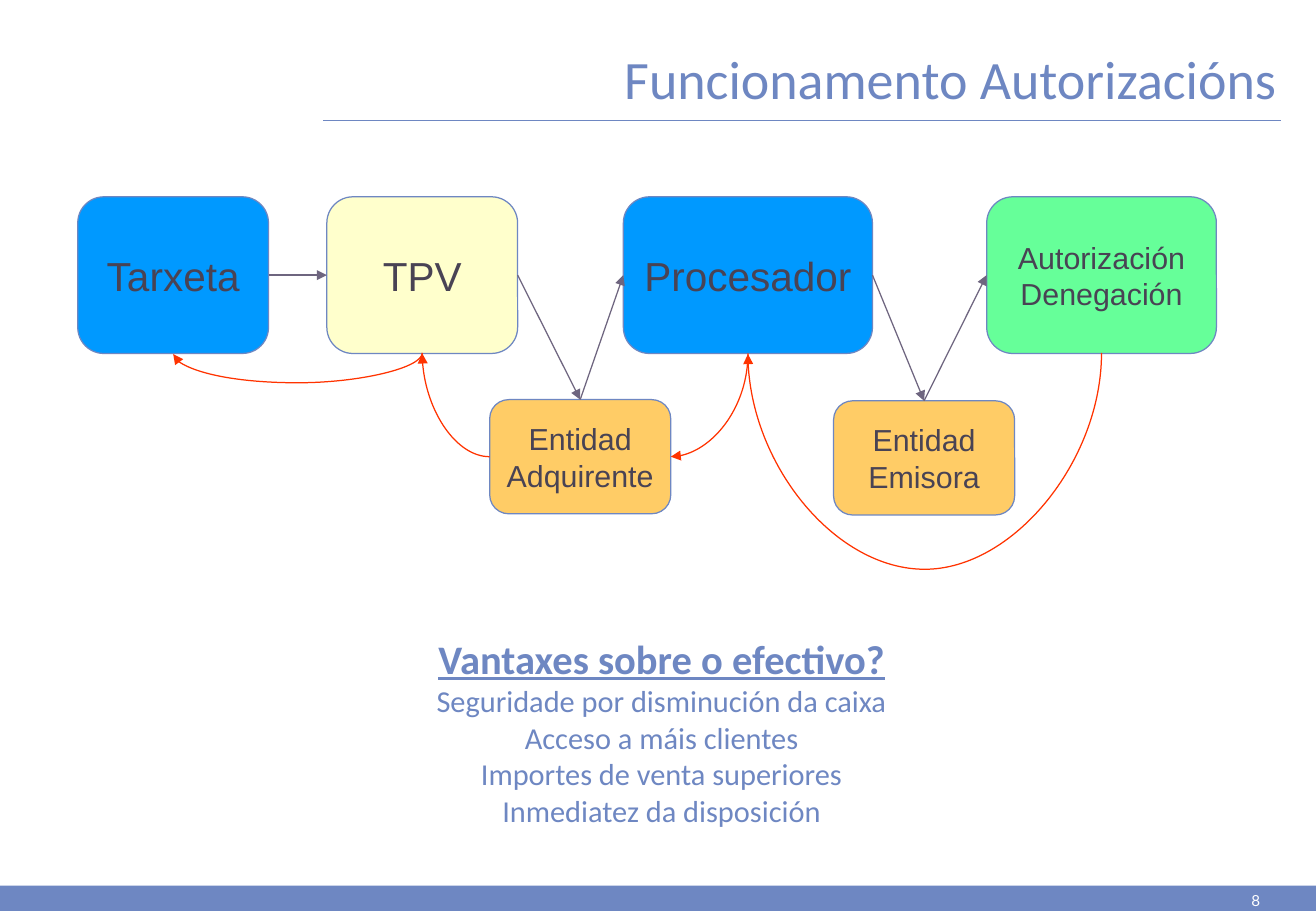
from dataclasses import dataclass

from lxml import etree
from pptx import Presentation
from pptx.dml.color import RGBColor
from pptx.enum.shapes import MSO_CONNECTOR, MSO_SHAPE
from pptx.enum.text import MSO_ANCHOR, MSO_AUTO_SIZE, PP_ALIGN
from pptx.oxml.ns import qn
from pptx.shapes.autoshape import Shape
from pptx.shapes.connector import Connector
from pptx.slide import Slide
from pptx.text.text import TextFrame
from pptx.util import Pt

PX = 9144
STRAIGHT, CURVE = MSO_CONNECTOR.STRAIGHT, MSO_CONNECTOR.CURVE
RECT, ROUND = MSO_SHAPE.RECTANGLE, MSO_SHAPE.ROUNDED_RECTANGLE
CENTER, RIGHT = PP_ALIGN.CENTER, PP_ALIGN.RIGHT
MIDDLE, BOTTOM = MSO_ANCHOR.MIDDLE, MSO_ANCHOR.BOTTOM
NO_FIT = MSO_AUTO_SIZE.NONE
SITE = {"top": 0, "left": 1, "bottom": 2, "right": 3}


@dataclass(frozen=True)
class Theme:
    brand: str = "6E87C2"
    white: str = "FFFFFF"
    ink: str = "494354"
    blue: str = "0099FF"
    cream: str = "FFFFCC"
    amber: str = "FFCC66"
    green: str = "66FF99"
    ask: str = "6E657F"
    reply: str = "FF3300"
    title: int = 32
    large: int = 24
    small: int = 18
    page: int = 9
    thin: float = 0.25
    edge: float = 0.75
    body: str = "Calibri"
    label: str = "Arial"
    number: str = "Lato"


@dataclass(frozen=True)
class Node:
    name: str
    text: str
    x: int
    y: int
    w: int
    h: int
    fill: str
    size: int


@dataclass(frozen=True)
class Link:
    start: str
    exit: str
    end: str
    entry: str


@dataclass(frozen=True)
class Curve(Link):
    turn: int
    drop: int = 0


T = Theme()

NODES = [
    Node("card", "Tarxeta", 64, 162, 157, 129, T.blue, T.large),
    Node("till", "TPV", 269, 162, 157, 129, T.cream, T.large),
    Node("switch", "Procesador", 513, 162, 205, 129, T.blue, T.large),
    Node("buyer", "Entidad\nAdquirente", 403, 329, 149, 94, T.amber, T.small),
    Node("bank", "Entidad\nEmisora", 686, 330, 149, 94, T.amber, T.small),
    Node("verdict", "Autorización\nDenegación", 812, 162, 189, 129, T.green, T.small),
]

LINKS = [
    Link("card", "right", "till", "left"),
    Link("till", "right", "buyer", "top"),
    Link("buyer", "top", "switch", "left"),
    Link("switch", "right", "bank", "top"),
    Link("bank", "top", "verdict", "left"),
]

CURVES = [
    Curve("verdict", "bottom", "switch", "bottom", 90, 181),
    Curve("switch", "bottom", "buyer", "right", 90),
    Curve("buyer", "left", "till", "bottom", 180),
    Curve("till", "bottom", "card", "bottom", 90, 25),
]

GAINS = [
    "Vantaxes sobre o efectivo?",
    "Seguridade por disminución da caixa",
    "Acceso a máis clientes",
    "Importes de venta superiores",
    "Inmediatez da disposición",
]


def px(*nums: int) -> list[int]:
    return [num * PX for num in nums]


def style(frame: TextFrame, font: str, size: int, color: str, align: PP_ALIGN) -> None:
    for para in frame.paragraphs:
        para.alignment = align
        for run in para.runs:
            run.font.name = font
            run.font.size = Pt(size)
            run.font.color.rgb = RGBColor.from_string(color)


def add_title(slide: Slide, text: str) -> None:
    title = slide.shapes.title
    title.left, title.top, title.width, title.height = px(61, 36, 1000, 55)
    frame = title.text_frame
    frame.text = text
    frame.auto_size = NO_FIT
    frame.vertical_anchor = BOTTOM
    frame.margin_bottom = 0
    style(frame, T.body, T.title, T.brand, RIGHT)


def add_text(slide: Slide, box: list[int], text: str, font: str, size: int, color: str) -> TextFrame:
    frame = slide.shapes.add_textbox(*box).text_frame
    frame.word_wrap = True
    frame.text = text
    style(frame, font, size, color, CENTER)
    return frame


def add_node(slide: Slide, node: Node) -> Shape:
    shape = slide.shapes.add_shape(ROUND, *px(node.x, node.y, node.w, node.h))
    shape.shadow.inherit = False
    shape.fill.solid()
    shape.fill.fore_color.rgb = RGBColor.from_string(node.fill)
    shape.line.color.rgb = RGBColor.from_string(T.brand)
    shape.line.width = Pt(T.edge)
    frame = shape.text_frame
    frame.word_wrap = False
    frame.vertical_anchor = MIDDLE
    frame.text = node.text
    style(frame, T.label, node.size, T.ink, CENTER)
    return shape


def paint(line: Connector, color: str, width: float, arrow: bool) -> None:
    line.line.color.rgb = RGBColor.from_string(color)
    line.line.width = Pt(width)
    props = line._element.spPr
    if arrow:
        etree.SubElement(props.find(qn("a:ln")), qn("a:tailEnd"), type="triangle")
    etree.SubElement(props, qn("a:effectLst"))


def join(slide: Slide, link: Link, shapes: dict[str, Shape], kind: MSO_CONNECTOR, color: str) -> Connector:
    line = slide.shapes.add_connector(kind, 0, 0, 0, 0)
    line.begin_connect(shapes[link.start], SITE[link.exit])
    line.end_connect(shapes[link.end], SITE[link.entry])
    paint(line, color, T.edge, True)
    return line


def bend(line: Connector, curve: Curve) -> None:
    mid_x = (line.begin_x + line.end_x) // 2
    mid_y = (line.begin_y + line.end_y) // 2
    wide = abs(line.end_x - line.begin_x)
    high = abs(line.end_y - line.begin_y)
    if curve.turn == 90:
        wide, high = high, wide
    wide = max(wide, PX)
    line.left, line.top = mid_x - wide // 2, mid_y - high // 2
    line.width, line.height = wide, high
    props = line._element.spPr
    frame = props.find(qn("a:xfrm"))
    frame.set("rot", str(curve.turn * 60000))
    frame.set("flipH", "0")
    frame.set("flipV", "0")
    shape = props.find(qn("a:prstGeom"))
    if curve.drop:
        ratio = curve.drop * PX * 100000 // wide
        guides = shape.find(qn("a:avLst"))
        etree.SubElement(guides, qn("a:gd"), name="adj1", fmla=f"val {ratio}")
    else:
        shape.set("prst", "curvedConnector2")


def main() -> None:
    deck = Presentation()
    deck.slide_width, deck.slide_height = px(1083, 750)
    slide = deck.slides.add_slide(deck.slide_layouts[5])

    rule = slide.shapes.add_connector(STRAIGHT, *px(266, 99, 1054, 99))
    paint(rule, T.brand, T.thin, False)
    band = slide.shapes.add_shape(RECT, *px(0, 729, 1083, 21))
    band.shadow.inherit = False
    band.fill.solid()
    band.fill.fore_color.rgb = RGBColor.from_string(T.brand)
    band.line.fill.background()
    add_text(slide, px(1006, 729, 55, 21), "8", T.number, T.page, T.white)

    add_title(slide, "Funcionamento Autorizacións")
    gains = add_text(slide, px(88, 517, 913, 172), "\n".join(GAINS), T.body, T.small, T.brand)
    head = gains.paragraphs[0].runs[0].font
    head.size, head.bold, head.underline = Pt(T.large), True, True

    shapes = {node.name: add_node(slide, node) for node in NODES}
    for link in LINKS:
        join(slide, link, shapes, STRAIGHT, T.ask)
    for curve in CURVES:
        bend(join(slide, curve, shapes, CURVE, T.reply), curve)

    deck.save("out.pptx")


if __name__ == "__main__":
    main()
